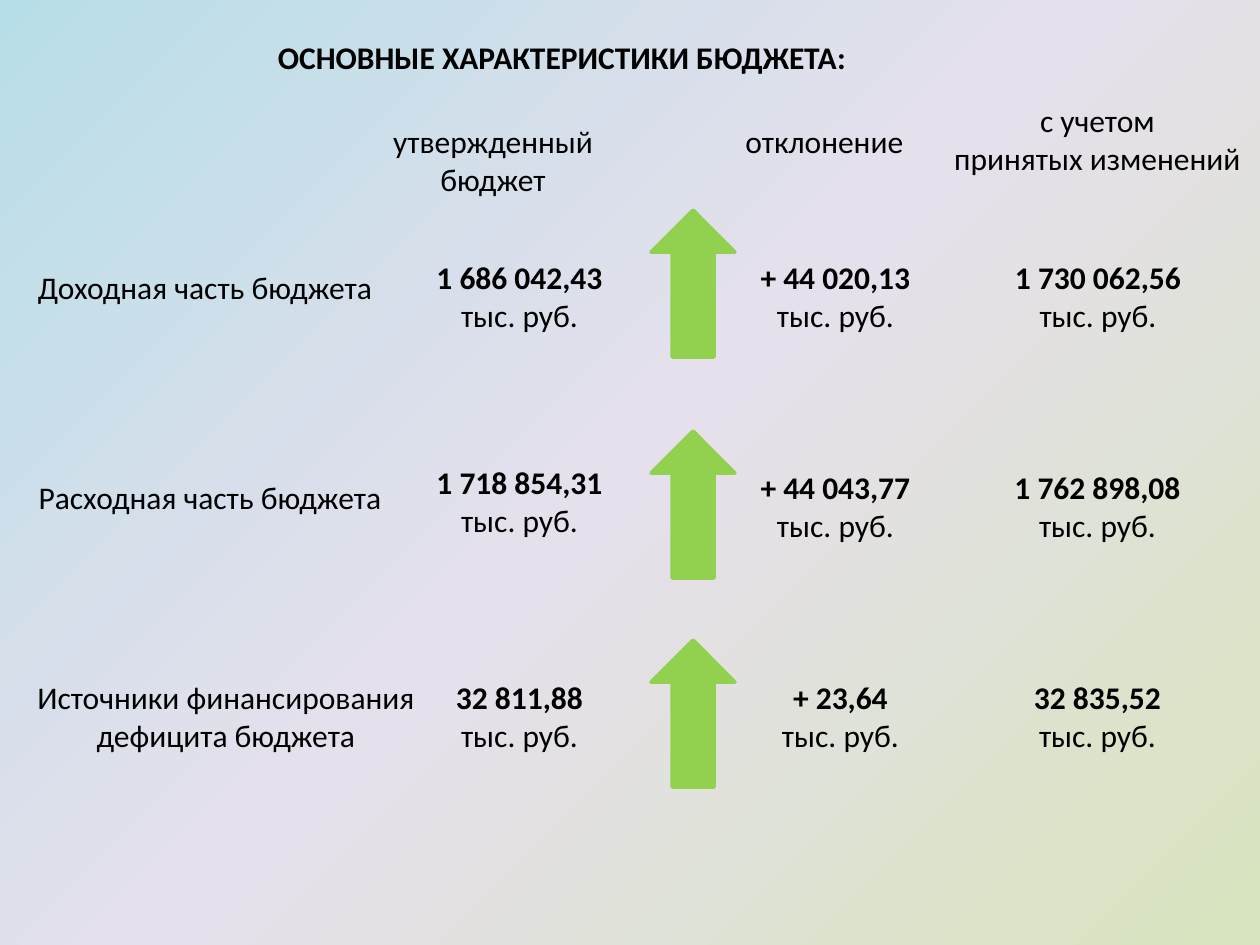
from pptx import Presentation
from pptx.dml.color import RGBColor
from pptx.enum.shapes import MSO_SHAPE
from pptx.enum.text import MSO_AUTO_SIZE, PP_ALIGN
from pptx.oxml import parse_xml
from pptx.util import Emu, Pt

UNIT = "тыс. руб."
ONE_LINE, TWO_LINES = 50, 89  # box heights, px
ARROW_X, ARROW_W, ARROW_H = 651, 84, 147
GREEN, BLACK = "92D050", "000000"
GRADIENT = [(0, "D7E4BD"), (50, "E6E0EC"), (100, "B7DEE8")]

# (lines, left, top, width, height)
TITLE = (["ОСНОВНЫЕ ХАРАКТЕРИСТИКИ БЮДЖЕТА:"], 262, 32, 600, ONE_LINE)
HEADERS = [
    (["утвержденный бюджет"], 346, 116, 294, TWO_LINES),
    (["отклонение"], 725, 116, 199, ONE_LINE),
    (["с учетом", "принятых изменений"], 935, 95, 325, TWO_LINES),
]
# label (text, top, width, height), arrow top, values (amount, left, top, width)
ROWS = [
    (("Доходная часть бюджета", 262, 368, ONE_LINE), 210,
     [("1 686 042,43", 420, 252, 199), ("+ 44 020,13", 746, 252, 179),
      ("1 730 062,56", 977, 252, 242)]),
    (("Расходная часть бюджета", 472, 378, ONE_LINE), 431,
     [("1 718 854,31", 420, 457, 199), ("+ 44 043,77", 746, 462, 179),
      ("1 762 898,08", 998, 462, 199)]),
    (("Источники финансирования дефицита бюджета", 672, 410, TWO_LINES), 640,
     [("32 811,88", 420, 672, 199), ("+ 23,64", 746, 672, 189),
      ("32 835,52", 998, 672, 199)]),
]
LABEL_X = 21


def px(*values):
    return [Emu(round(v * 914400 / 126)) for v in values]


def rgb(color):
    return RGBColor.from_string(color)


def add_text(s, lines, x, y, w, h, bold_first=False, wrap=True):
    tf = s.shapes.add_textbox(*px(x, y, w, h)).text_frame
    tf.word_wrap = wrap
    tf.auto_size = MSO_AUTO_SIZE.SHAPE_TO_FIT_TEXT
    for i, line in enumerate(lines):
        p = tf.add_paragraph() if i else tf.paragraphs[0]
        p.alignment = PP_ALIGN.CENTER
        r = p.add_run()
        r.text = line
        font = {"name": "Calibri", "size": Pt(18), "bold": bold_first and i == 0}
        for key, value in font.items():
            setattr(r.font, key, value)
        r.font.color.rgb = rgb(BLACK)


def add_up_arrow(s, y):
    sp = s.shapes.add_shape(MSO_SHAPE.DOWN_ARROW, *px(ARROW_X, y, ARROW_W, ARROW_H))
    sp.rotation = 180
    sp.shadow.inherit = False
    sp.fill.solid()
    sp.fill.fore_color.rgb = rgb(GREEN)
    sp.line.color.rgb = rgb(GREEN)
    sp.line.width = Pt(2)


def set_background(s):
    stops = "".join(f'<a:gs pos="{pos * 1000}"><a:srgbClr val="{color}"/></a:gs>'
                    for pos, color in GRADIENT)
    bg = parse_xml(
        '<p:bg xmlns:p="http://schemas.openxmlformats.org/presentationml/2006/main"'
        ' xmlns:a="http://schemas.openxmlformats.org/drawingml/2006/main"><p:bgPr>'
        f'<a:gradFill rotWithShape="1"><a:gsLst>{stops}</a:gsLst>'
        '<a:path path="circle"><a:fillToRect l="100000" t="100000"/></a:path>'
        '<a:tileRect r="-100000" b="-100000"/></a:gradFill>'
        '<a:effectLst/></p:bgPr></p:bg>')
    s.element.cSld.insert(0, bg)


def main():
    prs = Presentation()
    prs.slide_width, prs.slide_height = px(1260, 945)
    s = prs.slides.add_slide(prs.slide_layouts[6])
    set_background(s)

    # Title and column headers
    add_text(s, *TITLE, bold_first=True, wrap=False)
    for header in HEADERS:
        add_text(s, *header)

    # Budget rows: label, arrow, three amounts
    for (label, top, width, height), arrow_y, values in ROWS:
        add_text(s, [label], LABEL_X, top, width, height)
        add_up_arrow(s, arrow_y)
        for amount, x, y, w in values:
            add_text(s, [amount, UNIT], x, y, w, TWO_LINES, bold_first=True)

    prs.save("out.pptx")


if __name__ == "__main__":
    main()
